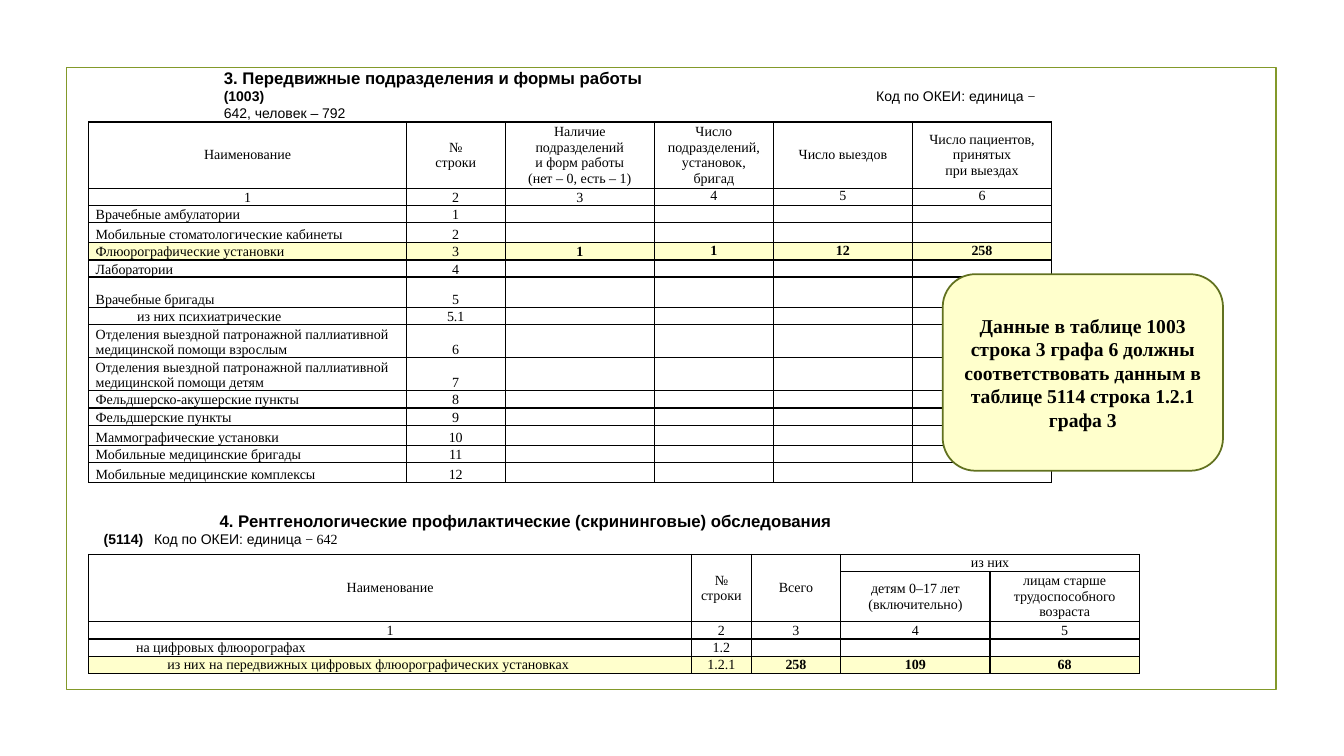
from lxml import etree
from pptx import Presentation
from pptx.dml.color import RGBColor
from pptx.enum import shapes, text
from pptx.oxml import ns
from pptx.util import Inches, Pt

SERIF, SANS = "Times New Roman", "Arial"
LEFT, CENTER = text.PP_ALIGN.LEFT, text.PP_ALIGN.CENTER
TOP, MIDDLE, BOTTOM = text.MSO_ANCHOR.TOP, text.MSO_ANCHOR.MIDDLE, text.MSO_ANCHOR.BOTTOM

UNIT_HEADER = ["Наименование", "№\nстроки", "Наличие подразделений\nи форм работы\n(нет – 0, есть – 1)",
               "Число\nподразделений, установок, бригад", "Число выездов",
               "Число пациентов, принятых\nпри выездах"]
# name, line number, row height
UNITS = [
    ("Врачебные амбулатории", "1", 0.17),
    ("Мобильные стоматологические кабинеты", "2", 0.2),
    ("Флюорографические установки", "3", 0.17),
    ("Лаборатории", "4", 0.17),
    ("Врачебные бригады", "5", 0.3),
    ("из них психиатрические", "5.1", 0.17),
    ("Отделения выездной патронажной паллиативной медицинской помощи взрослым", "6", 0.33),
    ("Отделения выездной патронажной паллиативной медицинской помощи детям", "7", 0.33),
    ("Фельдшерско-акушерские пункты", "8", 0.17),
    ("Фельдшерские пункты", "9", 0.17),
    ("Маммографические установки", "10", 0.2),
    ("Мобильные медицинские бригады", "11", 0.17),
    ("Мобильные медицинские комплексы", "12", 0.2),
]
UNIT_VALUES = {"3": ["1", "1", "12", "258"]}
SCREENING = [
    ["Наименование", "№ строки", "Всего", "из них", ""],
    ["", "", "", "детям 0–17 лет\n(включительно)", "лицам старше трудоспособного возраста"],
    ["1", "2", "3", "4", "5"],
    ["на цифровых флюорографах", "1.2", "", "", ""],
    ["из них на передвижных цифровых флюорографических установках", "1.2.1", "258", "109", "68"],
]


def color(value):
    return RGBColor.from_string(value)


def write(paragraph, content, size=10, face=SERIF, bold=False, align=LEFT, indent=0, tab=None):
    """Append a formatted run; indent and tab are in inches."""
    properties = paragraph._p.get_or_add_pPr()
    if indent:
        properties.set("marL", str(Inches(indent)))
        properties.set("indent", "0")
    if tab:
        stops = etree.SubElement(properties, ns.qn("a:tabLst"))
        etree.SubElement(stops, ns.qn("a:tab"), pos=str(Inches(tab)), algn="l")
    paragraph.alignment = align
    run = paragraph.add_run()
    run.text = content
    font = run.font
    font.size, font.name, font.bold = Pt(size), face, bold
    font.color.rgb = color("000000")


class FormSlide:
    black, highlight, olive, dark_olive = "000000", "FFFFCC", "83992A", "61711F"

    def __init__(self, deck):
        self.slide = deck.slides.add_slide(deck.slide_layouts[5])

    def shape(self, kind, left, top, width, height, line, fill=None):
        panel = self.slide.shapes.add_shape(kind, Inches(left), Inches(top), Inches(width), Inches(height))
        panel.shadow.inherit = False
        panel.line.color.rgb = color(line)
        panel.line.width = Pt(1.25)
        if fill:
            panel.fill.solid()
            panel.fill.fore_color.rgb = color(fill)
        else:
            panel.fill.background()
        return panel

    def heading(self, box, title, number, code, title_indent, number_indent, code_tab):
        """Write a section title over its table number and unit code."""
        frame = box.text_frame
        frame.word_wrap = True
        frame.auto_size = text.MSO_AUTO_SIZE.NONE
        frame.vertical_anchor = MIDDLE
        write(frame.paragraphs[0], title, size=12, face=SANS, bold=True, indent=title_indent)
        caption = frame.add_paragraph()
        write(caption, number + "\t", face=SANS, bold=True, indent=number_indent, tab=code_tab)
        for part, face in code:
            write(caption, part, face=face)

    def title(self, left, top, width, height, *content):
        box = self.slide.shapes.title
        box.left, box.top, box.width, box.height = map(Inches, (left, top, width, height))
        self.heading(box, *content)

    def subtitle(self, left, top, width, height, *content):
        box = self.slide.shapes.add_textbox(Inches(left), Inches(top), Inches(width), Inches(height))
        self.heading(box, *content)

    def table(self, left, top, widths, heights):
        grid = self.slide.shapes.add_table(len(heights), len(widths), Inches(left), Inches(top),
                                           Inches(sum(widths)), Inches(sum(heights))).table
        grid.first_row = grid.horz_banding = False
        for column, width in zip(grid.columns, widths):
            column.width = Inches(width)
        for row, height in zip(grid.rows, heights):
            row.height = Inches(height)
        return grid

    def cell(self, cell, content, anchor=MIDDLE, marked=False, **style):
        cell.margin_left = cell.margin_right = Inches(0.07)
        cell.margin_top = cell.margin_bottom = 0
        cell.vertical_anchor = anchor
        for side in ("lnL", "lnR", "lnT", "lnB"):
            border = etree.SubElement(cell._tc.get_or_add_tcPr(), ns.qn("a:" + side), w=str(Pt(1)))
            paint = etree.SubElement(border, ns.qn("a:solidFill"))
            etree.SubElement(paint, ns.qn("a:srgbClr"), val=self.black)
        if marked:
            cell.fill.solid()
            cell.fill.fore_color.rgb = color(self.highlight)
        else:
            cell.fill.background()
        frame = cell.text_frame
        if not content:
            etree.SubElement(frame.paragraphs[0]._p, ns.qn("a:endParaRPr"), sz="800")
            return
        for index, line in enumerate(content.split("\n")):
            paragraph = frame.add_paragraph() if index else frame.paragraphs[0]
            write(paragraph, line, **style)

    def units_table(self):
        rows = [UNIT_HEADER, [str(n) for n in range(1, 7)]]
        rows += [[name, line] + UNIT_VALUES.get(line, [""] * 4) for name, line, _ in UNITS]
        heights = [0.66, 0.17] + [height for _, _, height in UNITS]
        grid = self.table(0.88, 1.21, [3.15, 0.98, 1.48, 1.18, 1.38, 1.38], heights)
        for r, row in enumerate(rows):
            marked = r > 1 and row[1] in UNIT_VALUES
            for c, content in enumerate(row):
                anchor = MIDDLE if r == 0 else BOTTOM if c < 3 else TOP
                self.cell(grid.cell(r, c), content, anchor, marked,
                          bold=marked and c > 1,
                          align=LEFT if r > 1 and c == 0 else CENTER,
                          indent=0.41 if content.startswith("из них") else 0)

    def screening_table(self):
        grid = self.table(0.88, 5.5, [5.98, 0.59, 0.89, 1.48, 1.48], [0.17, 0.5, 0.17, 0.17, 0.17])
        for c in range(3):
            grid.cell(0, c).merge(grid.cell(1, c))
        grid.cell(0, 3).merge(grid.cell(0, 4))
        name_indents = {3: 0.4, 4: 0.71}
        for r, row in enumerate(SCREENING):
            marked = row[1] == "1.2.1"
            for c, content in enumerate(row):
                is_name = c == 0 and r in name_indents
                self.cell(grid.cell(r, c), content, marked=marked,
                          bold=marked and c > 1,
                          align=LEFT if is_name else CENTER,
                          indent=name_indents[r] if is_name else 0)

    def callout(self, content):
        note = self.shape(shapes.MSO_SHAPE.ROUNDED_RECTANGLE, 9.35, 2.72, 2.78, 1.95,
                          self.dark_olive, self.highlight)
        note.text_frame.word_wrap = True
        note.text_frame.vertical_anchor = MIDDLE
        write(note.text_frame.paragraphs[0], content, size=14, bold=True, align=CENTER)


def main():
    deck = Presentation()
    deck.slide_width, deck.slide_height = Inches(13.33), Inches(7.5)
    form = FormSlide(deck)
    form.shape(shapes.MSO_SHAPE.RECTANGLE, 0.66, 0.67, 12, 6.17, form.olive)
    form.units_table()
    form.title(0.88, 0.7, 9.54, 0.47, "3. Передвижные подразделения и формы работы", "(1003)",
               [("Код по ОКЕИ: единица ", SANS), ("−", SERIF), (" 642, человек – 792", SANS)],
               1.24, 0, 6.47)
    form.screening_table()
    form.subtitle(0.88, 5, 10.53, 0.5,
                  "4. Рентгенологические профилактические (скрининговые) обследования", "(5114)",
                  [("Код по ОКЕИ: единица ", SANS), ("− 642", SERIF)],
                  1.2, 0.05, 7.68)
    form.callout("Данные в таблице 1003 строка 3 графа 6 должны соответствовать данным "
                 "в таблице 5114 строка 1.2.1 графа 3")
    deck.save("out.pptx")


if __name__ == "__main__":
    main()
